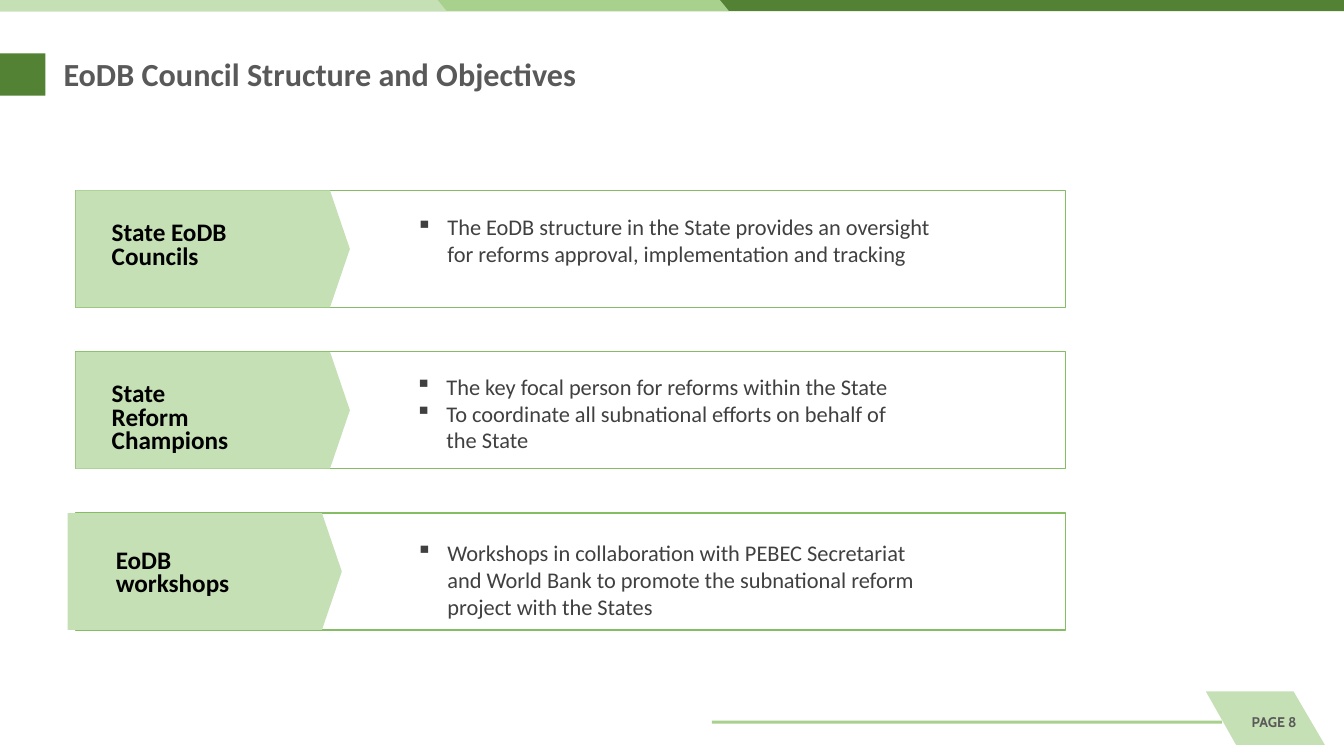
from collections import namedtuple

from lxml import etree
from pptx import Presentation
from pptx.dml.color import RGBColor
from pptx.enum.shapes import MSO_SHAPE as Shape
from pptx.enum.text import MSO_ANCHOR as Anchor, PP_ALIGN as Align
from pptx.oxml.ns import qn
from pptx.util import Pt

PX = 9144  # 100 px to the inch
SLIDE_W, SLIDE_H = 1333, 750
PALE, MID, DARK, OUTLINE = "C5E0B4", "A9D18E", "548235", "85BD64"
GREY, BODY, BLACK = "595959", "404040", "000000"
ROW_LEFT, ROW_TOP, ROW_W, ROW_H, ROW_PITCH = 75, 189, 982, 116, 160

# Label and bullet boxes are (left, top, width, height) within the row.
Row = namedtuple("Row", "label label_box points points_box tag_shift")
ROWS = [
    Row("State EoDB Councils", (26, 27, 181, 53),
        ["The EoDB structure in the State provides an oversight for reforms "
         "approval, implementation and tracking"],
        (328, 18, 535, 64), 0),
    Row("State Reform Champions", (26, 27, 136, 75),
        ["The key focal person for reforms within the State",
         "To coordinate all subnational efforts on behalf of the State"],
        (327, 16, 518, 112), 0),
    Row("EoDB workshops", (30, 32, 172, 53),
        ["Workshops in collaboration with PEBEC Secretariat and World Bank to "
         "promote the subnational reform project with the States"],
        (328, 21, 527, 91), -8),
]


def color(value):
    return RGBColor.from_string(value)


def emu(*lengths):
    return [length * PX for length in lengths]


def paint(shape, fill=None, line=None):
    shape.shadow.inherit = False
    if fill:
        shape.fill.solid()
        shape.fill.fore_color.rgb = color(fill)
    else:
        shape.fill.background()
    if line:
        shape.line.color.rgb = color(line)
        shape.line.width = Pt(1)
    else:
        shape.line.fill.background()
    return shape


def add_block(slide, box, fill=None, line=None, kind=Shape.RECTANGLE):
    return paint(slide.shapes.add_shape(kind, *emu(*box)), fill, line)


def add_outline(slide, points, fill):
    builder = slide.shapes.build_freeform(*points[0], scale=PX)
    builder.add_line_segments(points[1:], close=True)
    paint(builder.convert_to_shape(), fill)


def write(frame, lines, size, ink, bold=False, font="Calibri", spacing=None):
    frame.word_wrap = True
    frame.text = "\n".join(lines)
    for paragraph in frame.paragraphs:
        paragraph.line_spacing = spacing
        for run in paragraph.runs:
            run.font.name, run.font.size = font, Pt(size)
            run.font.bold, run.font.color.rgb = bold, color(ink)


def add_text(slide, box, lines, size, ink, **style):
    frame = slide.shapes.add_textbox(*emu(*box)).text_frame
    write(frame, lines, size, ink, **style)
    return frame


def add_bullet(paragraph):
    props = paragraph._p.get_or_add_pPr()
    props.set("marL", str(31 * PX))
    props.set("indent", str(-31 * PX))
    ink = etree.SubElement(props, qn("a:buClr"))
    etree.SubElement(ink, qn("a:srgbClr"), val=BODY)
    etree.SubElement(props, qn("a:buChar"), char="▪")


def draw_top_band(slide, height):
    add_block(slide, (0, 0, SLIDE_W, height), DARK)
    for width, fill in ((723, MID), (443, PALE)):
        add_outline(slide, [(0, 0), (width - 9, 0), (width, height), (0, height)], fill)


def draw_title(slide, left, top):
    title = slide.shapes.title
    title.left, title.top, title.width, title.height = emu(left + 53, top + 3, 583, 41)
    write(title.text_frame, ["EoDB Council Structure and Objectives"], 23, GREY,
          bold=True, spacing=0.8)
    title.text_frame.vertical_anchor = Anchor.TOP
    title.text_frame.paragraphs[0].alignment = Align.LEFT
    add_block(slide, (left, top, 45, 42), DARK)


def draw_row(slide, row, left, top):
    def within(box):
        return (left + box[0], top + box[1], *box[2:])

    add_block(slide, (left, top, ROW_W, ROW_H), line=OUTLINE)
    tag = add_block(slide, (left + row.tag_shift, top, 272, ROW_H), PALE,
                    kind=Shape.PENTAGON)
    tag.adjustments[0] = 0.17
    add_text(slide, within(row.label_box), [row.label], 18, BLACK,
             bold=True, spacing=0.78)
    points = add_text(slide, within(row.points_box), row.points, 16, BODY)
    for paragraph in points.paragraphs:
        add_bullet(paragraph)


def draw_page_mark(slide, left, top):
    add_outline(slide, [(left, top), (left + 87, top), (left + 118, top + 53),
                        (left + 30, top + 53)], PALE)
    add_block(slide, (left - 490, top + 29, 506, 3), MID)
    frame = add_text(slide, (left - 154, top + 22, 244, 19), ["PAGE 8"], 10, GREY,
                     bold=True, font="Cabin")
    frame.margin_left = frame.margin_top = frame.margin_right = 0
    frame.margin_bottom = 2 * PX
    frame.vertical_anchor = Anchor.BOTTOM
    frame.paragraphs[0].alignment = Align.RIGHT


def main():
    deck = Presentation()
    deck.slide_width, deck.slide_height = emu(SLIDE_W, SLIDE_H)
    slide = deck.slides.add_slide(deck.slide_layouts[5])
    draw_top_band(slide, 11)
    draw_title(slide, 0, 53)
    for index, row in enumerate(ROWS):
        draw_row(slide, row, ROW_LEFT, ROW_TOP + index * ROW_PITCH)
    draw_page_mark(slide, 1196, 686)
    deck.save("out.pptx")


if __name__ == "__main__":
    main()
